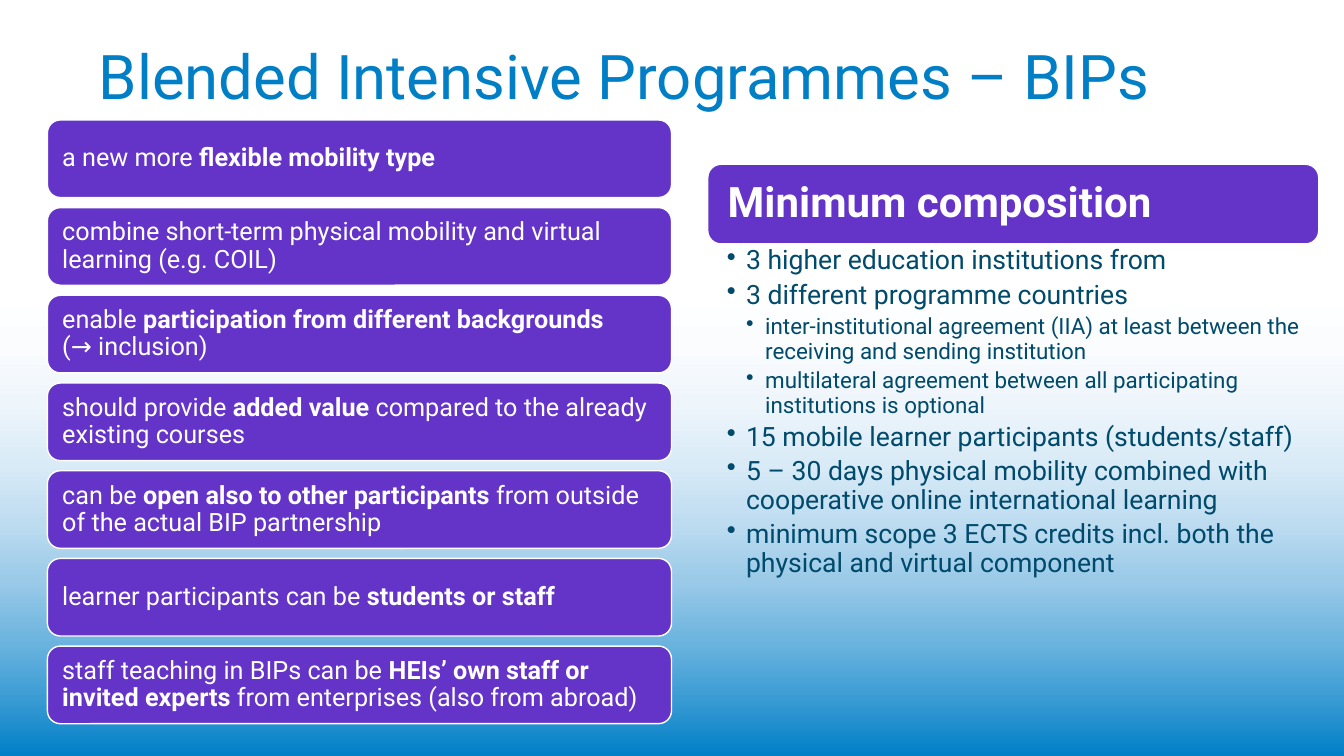
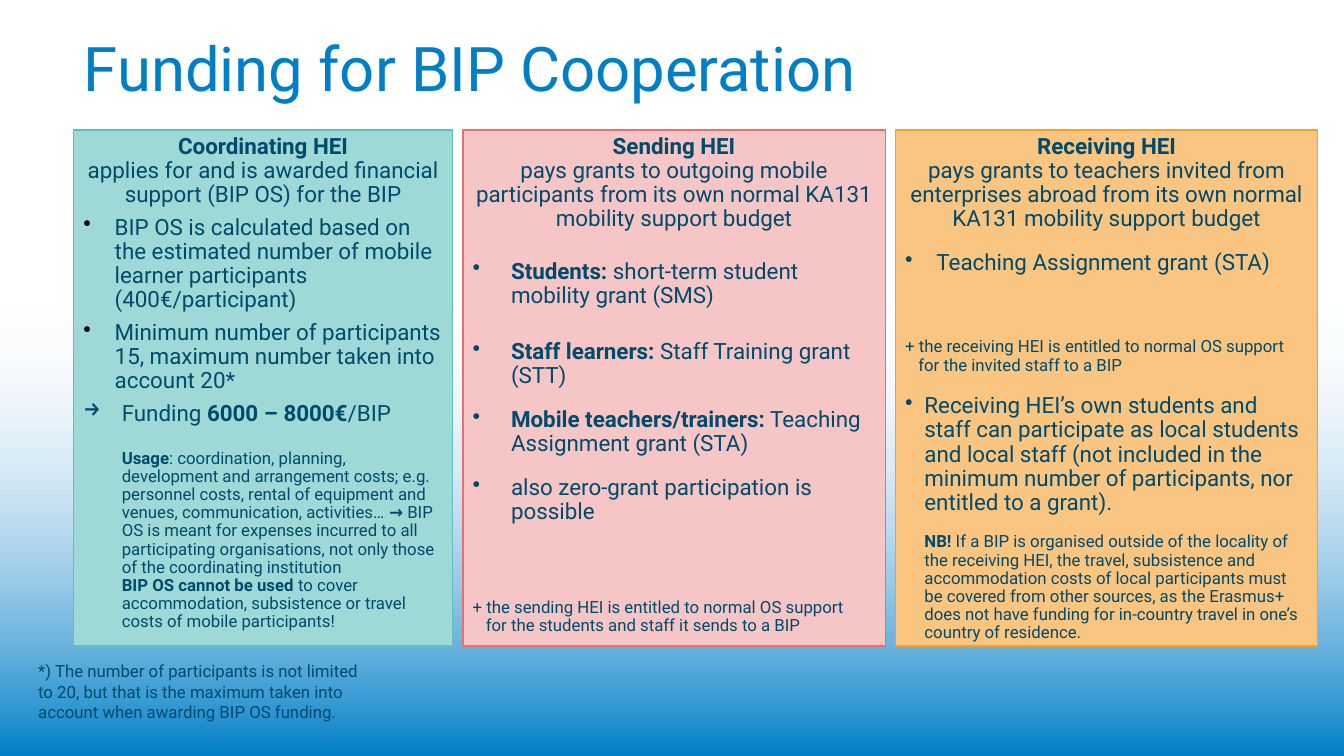
from copy import deepcopy

from lxml import etree
from pptx import Presentation
from pptx import util as u
from pptx.dml.color import RGBColor
from pptx.enum import shapes, text
from pptx.oxml.ns import qn

PX = 9144  # 100 px to the inch
FONT = "Roboto"
BLUE, NAVY, PURPLE, WHITE, BLACK = "007FC7", "004A6C", "6434C8", "FFFFFF", "000000"
PALE = "F7F5FC"
LEFT, CENTER = text.PP_ALIGN.LEFT, text.PP_ALIGN.CENTER
TOP, MIDDLE, BOTTOM = text.MSO_ANCHOR.TOP, text.MSO_ANCHOR.MIDDLE, text.MSO_ANCHOR.BOTTOM
PANEL_INSETS = (10, 5, 10, 5)

FEATURES = [
    "a new more **flexible mobility type**",
    "combine short-term physical mobility and virtual learning (e.g. COIL)",
    "enable **participation from different backgrounds**\n(→ inclusion)",
    "should provide **added value** compared to the already existing courses",
    "can be **open also to other participants** from outside of the actual BIP partnership",
    "learner participants can be **students or staff**",
    "staff teaching in BIPs can be **HEIs’ own staff or invited experts** "
    "from enterprises (also from abroad)",
]

REQUIREMENTS = [
    (1, "3 higher education institutions from"),
    (1, "3 different programme countries"),
    (2, "inter-institutional agreement (IIA) at least between the receiving "
        "and sending institution"),
    (2, "multilateral agreement between all participating institutions is optional"),
    (1, "15 mobile learner participants (students/staff)"),
    (1, "5 – 30 days physical mobility combined with cooperative online "
        "international learning"),
    (1, "minimum scope 3 ECTS credits incl. both the physical and virtual component"),
]

# Each panel: width, fill, line, paragraphs as (text, format)
PANELS = [
    (376, "9ED9D8", "5DBFBE", [
        ("**Coordinating HEI**\napplies for and is awarded financial support (BIP OS) "
         "for the BIP", dict(align=CENTER)),
        ("BIP OS is calculated based on the estimated number of mobile learner "
         "participants (400€/participant)",
         dict(before=6, margin=31, hang=31, bullet="•", bullet_color=BLACK)),
        ("Minimum number of participants 15, maximum number taken into account 20*",
         dict(before=6, margin=31, hang=31, bullet="•", bullet_color=BLACK)),
        ("Funding **6000 – 8000€**/BIP", dict(before=6, margin=38, hang=38, bullet="→")),
        ("**Usage**: coordination, planning, development and arrangement costs; e.g. "
         "personnel costs, rental of equipment and venues, communication, activities…"
         "** → **BIP OS is meant for expenses incurred to all participating "
         "organisations, not only those of the coordinating institution",
         dict(size=12, before=17, margin=38)),
        ("**BIP OS cannot be used** to cover accommodation, subsistence or travel costs "
         "of mobile participants!", dict(size=12, margin=38)),
    ]),
    (419, "F6C5C5", "E86F6F", [
        ("**Sending HEI**\npays grants to outgoing mobile participants from its own "
         "normal KA131 mobility support budget", dict(align=CENTER)),
        ("**Students:** short-term student mobility grant (SMS)",
         dict(before=20, margin=38, hang=38, bullet="•")),
        ("**Staff learners:** Staff Training grant (STT)",
         dict(before=23, margin=38, hang=38, bullet="•")),
        ("**Mobile teachers/trainers:** Teaching Assignment grant (STA)",
         dict(before=14, margin=38, hang=38, bullet="•")),
        ("also zero-grant participation is possible",
         dict(before=14, margin=38, hang=38, bullet="•")),
        ("+ the sending HEI is entitled to normal OS support\n"
         "for the students and staff it sends to a BIP",
         dict(size=12, before=53, margin=13, hang=13)),
    ]),
    (419, "F9C581", "F59E2D", [
        ("**Receiving HEI**\npays grants to teachers invited from enterprises abroad "
         "from its own normal KA131 mobility support budget", dict(align=CENTER)),
        ("Teaching Assignment grant (STA)",
         dict(before=14, margin=31, hang=31, bullet="•")),
        ("+ the receiving HEI is entitled to normal OS support\n"
         "for the invited staff to a BIP",
         dict(size=12, before=45, margin=13, hang=13)),
        ("Receiving HEI’s own students and staff can participate as local students and "
         "local staff (not included in the minimum number of participants, nor entitled "
         "to a grant).", dict(before=14, margin=19, hang=19, bullet="•")),
        ("**NB!** If a BIP is organised outside of the locality of the receiving HEI, "
         "the travel, subsistence and accommodation costs of local participants must be "
         "covered from other sources, as the Erasmus+ does not have funding for "
         "in-country travel in one’s country of residence.",
         dict(size=12, before=13, margin=19)),
    ]),
]


def rgb(color):
    return RGBColor.from_string(color)


def px(*lengths):
    return [u.Emu(length * PX) for length in lengths]


def mix(start, end, share):
    """Blend two hex colours; share 0 gives start, 1 gives end."""
    pairs = zip(bytes.fromhex(start), bytes.fromhex(end))
    return "".join(f"{round(a + (b - a) * share):02X}" for a, b in pairs)


def set_background(master):
    """Fade from white to blue; the tint and its strength grow together."""
    fill = master.background.fill
    fill.gradient()
    fill.gradient_angle = 270
    stops = master.element.xpath(".//p:bg//a:gsLst")[0]
    for stop in list(stops):
        stops.remove(stop)
    steps = 8
    for step in range(steps + 1):
        share = step / steps
        color = mix(WHITE, mix(PALE, BLUE, share), share)
        stop = etree.SubElement(stops, qn("a:gs"), pos=str(round(38000 + 62000 * share)))
        etree.SubElement(stop, qn("a:srgbClr"), val=color)


def set_frame(frame, anchor, insets):
    frame.word_wrap = True
    frame.auto_size = text.MSO_AUTO_SIZE.NONE
    frame.vertical_anchor = anchor
    (frame.margin_left, frame.margin_top,
     frame.margin_right, frame.margin_bottom) = px(*insets)


def set_bullet(paragraph, bullet, color):
    properties = paragraph._p.get_or_add_pPr()
    bullet_color = etree.SubElement(properties, qn("a:buClr"))
    etree.SubElement(bullet_color, qn("a:srgbClr"), val=color)
    etree.SubElement(properties, qn("a:buChar"), char=bullet)


def write_paragraph(paragraph, content, size=16, color=NAVY, align=LEFT, before=0,
                    margin=0, hang=0, bullet=None, bullet_color=NAVY, spacing=0.9):
    """Fill a paragraph; ** switches bold and a newline breaks the line."""
    paragraph.alignment = align
    paragraph.line_spacing = spacing
    if before:
        paragraph.space_before = u.Pt(before)
    if margin:
        properties = paragraph._p.get_or_add_pPr()
        properties.set("marL", str(margin * PX))
        properties.set("indent", str(-hang * PX))
    if bullet:
        set_bullet(paragraph, bullet, bullet_color)
    font = paragraph.font
    font.name, font.size, font.color.rgb = FONT, u.Pt(size), rgb(color)
    for index, part in enumerate(content.split("**")):
        for line_number, line in enumerate(part.split("\n")):
            if line_number:
                paragraph.add_line_break()
            if line:
                run = paragraph.add_run()
                run.text = line
                if index % 2:
                    run.font.bold = True


def write_paragraphs(frame, items):
    for index, (content, style) in enumerate(items):
        paragraph = frame.add_paragraph() if index else frame.paragraphs[0]
        write_paragraph(paragraph, content, **style)


def add_titled_slide(presentation, title, box):
    slide = presentation.slides.add_slide(presentation.slide_layouts[5])
    shape = slide.shapes.title
    shape.left, shape.top, shape.width, shape.height = px(*box)
    set_frame(shape.text_frame, BOTTOM, PANEL_INSETS)
    write_paragraph(shape.text_frame.paragraphs[0], title, size=44, color=BLUE)
    return slide


def add_block(slide, kind, box, fill, line, anchor, insets, items):
    """Add a filled, outlined shape that holds paragraphs."""
    shape = slide.shapes.add_shape(kind, *px(*box))
    shape.shadow.inherit = False
    shape.fill.solid()
    shape.fill.fore_color.rgb = rgb(fill)
    shape.line.color.rgb = rgb(line)
    shape.line.width = u.Pt(1)
    set_frame(shape.text_frame, anchor, insets)
    write_paragraphs(shape.text_frame, items)


def add_card(slide, box, content, size, inset):
    add_block(slide, shapes.MSO_SHAPE.ROUNDED_RECTANGLE, box, PURPLE, WHITE, MIDDLE,
              (inset,) * 4, [(content, dict(size=size, color=WHITE))])


def add_text(slide, box, insets, items):
    frame = slide.shapes.add_textbox(*px(*box)).text_frame
    set_frame(frame, TOP, insets)
    write_paragraphs(frame, items)


def build_programmes(presentation):
    slide = add_titled_slide(presentation, "Blended Intensive Programmes – BIPs",
                             (88, -28, 1150, 145))
    for index, feature in enumerate(FEATURES):
        add_card(slide, (47, 119 + 87 * index, 619, 77), feature, 18, 11)
    add_card(slide, (702, 163, 606, 79), "**Minimum composition**", 30, 16)
    items = [(content, dict(size={1: 19, 2: 16}[level], before=4 if index else 0,
                            margin=19 * level, hang=19, bullet="•"))
             for index, (level, content) in enumerate(REQUIREMENTS)]
    add_text(slide, (702, 243, 606, 344), (19, 2, 12, 2), items)


def build_funding(presentation):
    slide = add_titled_slide(presentation, "Funding for BIP Cooperation",
                             (73, -36, 1246, 145))
    left = 73
    for width, fill, line, items in PANELS:
        add_block(slide, shapes.MSO_SHAPE.RECTANGLE, (left, 129, width, 512),
                  fill, line, TOP, PANEL_INSETS, items)
        left += width + 10
    footnote = ("*) The number of participants is not limited to 20, but that is the "
                "maximum taken into account when awarding BIP OS funding.")
    add_text(slide, (28, 651, 348, 71), PANEL_INSETS,
             [(footnote, dict(size=12, spacing=1.0))])


def main():
    presentation = Presentation()
    presentation.slide_width, presentation.slide_height = px(1333, 750)
    set_background(presentation.slide_master)
    build_programmes(presentation)
    build_funding(presentation)
    presentation.save("out.pptx")


if __name__ == "__main__":
    main()
